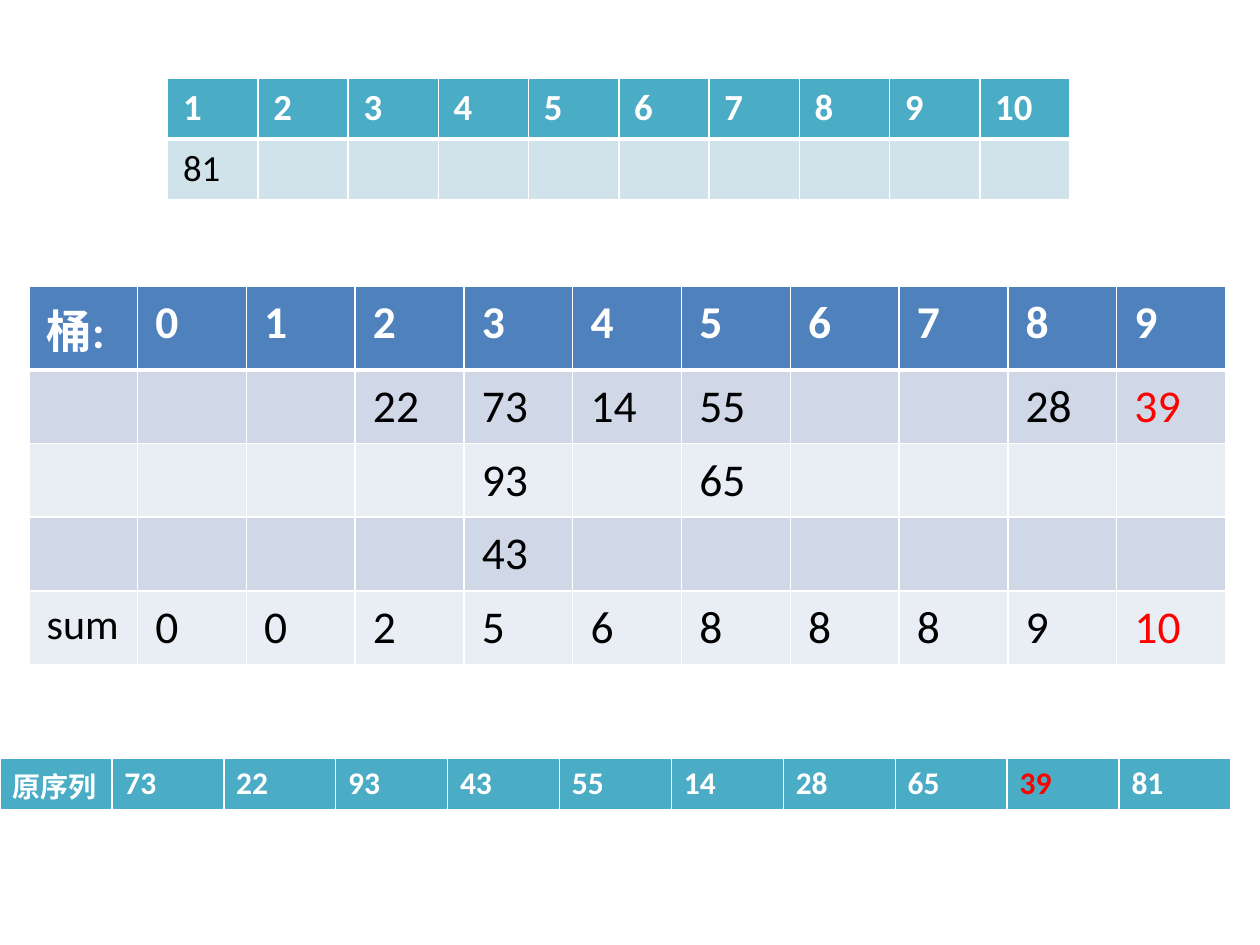
"""Build a slide showing one radix sort pass with its buckets and sequences."""
from lxml import etree
from pptx import Presentation
from pptx.dml.color import RGBColor
from pptx.oxml.ns import qn
from pptx.util import Cm, Pt

COLORS = {
    "white": "FFFFFF", "black": "000000", "red": "FF0000",
    "blue": "4F81BD", "blue_dark_band": "D0D8E8", "blue_light_band": "E9EDF4",
    "teal": "4BACC6", "teal_band": "D0E3EA",
}


def write_text(cell, text, size=18, color="black", bold=False):
    p = cell.text_frame.paragraphs[0]
    r = p.add_run()
    r.text = text
    r.font.name = "Calibri"
    r.font.size = Pt(size)
    r.font.bold = bold
    r.font.color.rgb = RGBColor.from_string(COLORS[color])


def add_borders(cell, bottom):
    tc_pr = cell._tc.get_or_add_tcPr()
    for side, width in (("L", 1), ("R", 1), ("T", 1), ("B", bottom)):
        ln = etree.SubElement(tc_pr, qn(f"a:ln{side}"), w=str(Pt(width)))
        fill = etree.SubElement(ln, qn("a:solidFill"))
        etree.SubElement(fill, qn("a:srgbClr"), val=COLORS["white"])


tables = [
    {
        "left": 0.58, "top": 5.77, "width": 24.13, "row_height": 1.47,
        "margins": (0.36, 0.18), "size": 26, "sizes": {"sum": 24},
        "header": "blue", "bands": ["blue_dark_band", "blue_light_band"],
        "red": {(1, 10), (4, 10)},
        "rows": [
            ["桶:", "0", "1", "2", "3", "4", "5", "6", "7", "8", "9"],
            ["", "", "", "22", "73", "14", "55", "", "", "28", "39"],
            ["", "", "", "", "93", "", "65", "", "", "", ""],
            ["", "", "", "", "43", "", "", "", "", "", ""],
            ["sum", "0", "0", "2", "5", "6", "8", "8", "8", "9", "10"],
        ],
    },
    {
        "left": 3.38, "top": 1.57, "width": 18.19, "row_height": 1.23,
        "margins": (0.31, 0.15), "size": 21, "sizes": {},
        "header": "teal", "bands": ["teal_band"], "red": set(),
        "rows": [[str(n) for n in range(1, 11)], ["81"] + [""] * 9],
    },
    {
        "left": 0, "top": 15.29, "width": 24.82, "row_height": 1.03,
        "margins": (0.25, 0.13), "size": 18, "sizes": {"原序列": 16},
        "header": "teal", "bands": [], "red": {(0, 9)},
        "rows": [["原序列", "73", "22", "93", "43", "55", "14", "28", "65", "39", "81"]],
    },
]

prs = Presentation()
prs.slide_width = Cm(25.4)
prs.slide_height = Cm(19.05)
s = prs.slides.add_slide(prs.slide_layouts[6])

for t in tables:
    rows = t["rows"]
    table = s.shapes.add_table(
        len(rows), len(rows[0]), Cm(t["left"]), Cm(t["top"]),
        Cm(t["width"]), Cm(t["row_height"] * len(rows))).table
    for i, values in enumerate(rows):
        is_header = i == 0
        fill = t["header"] if is_header else t["bands"][(i - 1) % len(t["bands"])]
        color = "white" if is_header else "black"
        for j, value in enumerate(values):
            cell = table.cell(i, j)
            cell.margin_left = cell.margin_right = Cm(t["margins"][0])
            cell.margin_top = cell.margin_bottom = Cm(t["margins"][1])
            add_borders(cell, bottom=3 if is_header else 1)
            cell.fill.solid()
            cell.fill.fore_color.rgb = RGBColor.from_string(COLORS[fill])
            if value:
                write_text(cell, value, size=t["sizes"].get(value, t["size"]),
                           color="red" if (i, j) in t["red"] else color,
                           bold=is_header)

prs.save("out.pptx")
